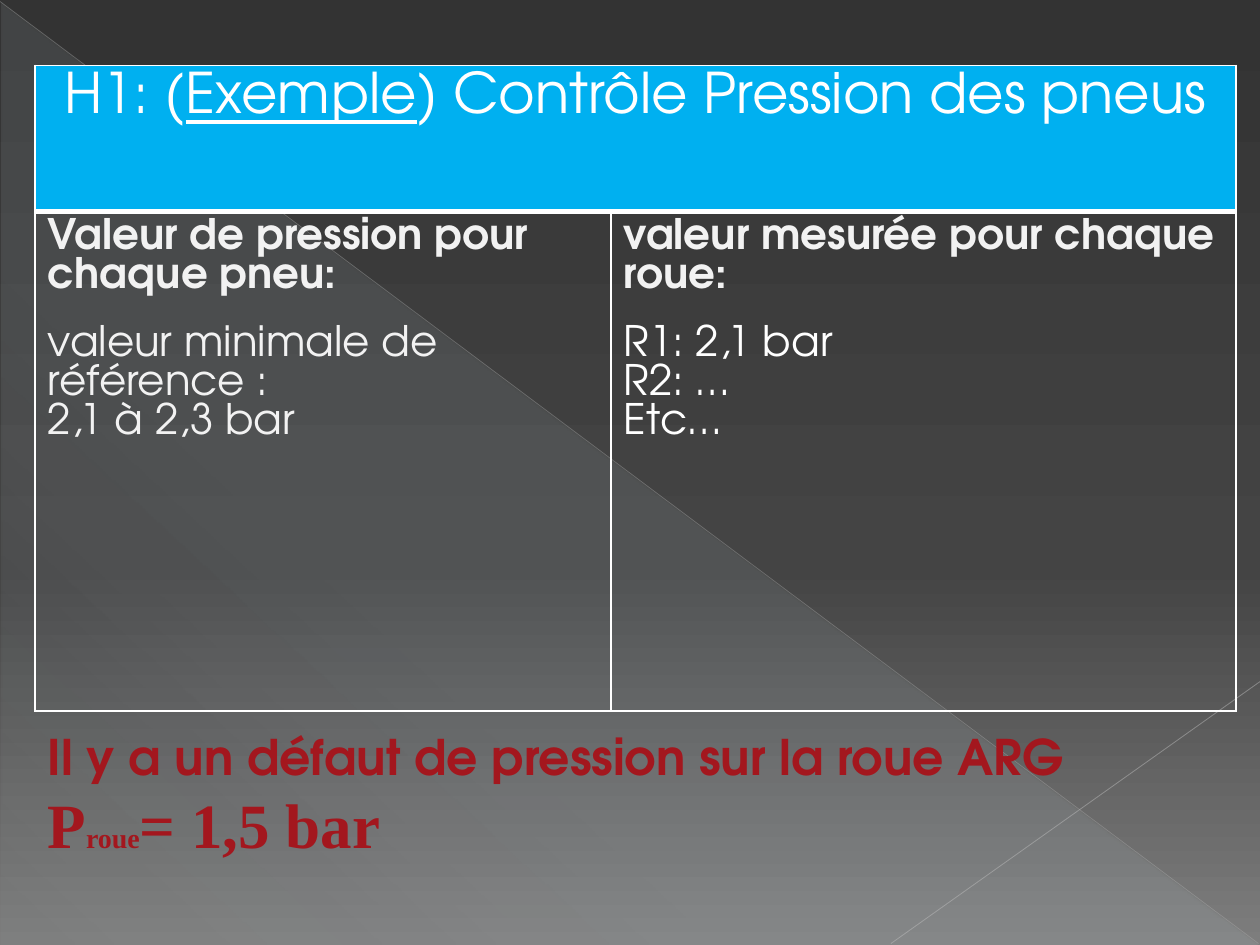
from lxml import etree
from pptx import Presentation
from pptx.dml.color import RGBColor
from pptx.enum.shapes import MSO_CONNECTOR, MSO_SHAPE
from pptx.enum.text import MSO_AUTO_SIZE, PP_ALIGN
from pptx.oxml.ns import qn
from pptx.util import Cm, Pt

STRAIGHT = MSO_CONNECTOR.STRAIGHT
TRIANGLE = MSO_SHAPE.RIGHT_TRIANGLE
GROW = MSO_AUTO_SIZE.SHAPE_TO_FIT_TEXT
CENTER = PP_ALIGN.CENTER
SANS = "TeX Gyre Adventor"
SERIF = "Times New Roman"
WHITE, LIGHT, RED, BLUE = "FFFFFF", "F2F2F2", "A3171E", "00B0F0"


def add_color(parent, color, opacity=100):
    element = etree.SubElement(parent, qn("a:srgbClr"), val=color)
    if opacity < 100:
        etree.SubElement(element, qn("a:alpha"), val=str(opacity * 1000))


def add_run(paragraph, text, color, **formats):
    run = paragraph.add_run()
    run.text = text
    run.font.color.rgb = RGBColor.from_string(color)
    for name, value in formats.items():
        setattr(run.font, name, value)
    return run


presentation = Presentation()
presentation.slide_width, presentation.slide_height = Cm(25.4), Cm(19.05)
slide = presentation.slides.add_slide(presentation.slide_layouts[6])

triangle = slide.shapes.add_shape(TRIANGLE, Cm(0.03), Cm(0.05), Cm(25.35), Cm(19))
triangle.shadow.inherit = False
triangle.line.fill.background()
background = slide.background

gradients = [
    (background.fill, slide.element.cSld.find(qn("p:bg")), 270,
     [(0, "333333", 100), (60, "444444", 100), (100, "7D7D7D", 100)]),
    (triangle.fill, triangle.element, 227,
     [(0, "DEF5FA", 10), (70, "DEF5FA", 8), (100, "DEF5FA", 1)]),
]
for fill, owner, angle, stops in gradients:
    fill.gradient()
    fill.gradient_angle = angle
    owner = slide.element.cSld.find(qn("p:bg")) if owner is None else owner
    stop_list = next(owner.iter(qn("a:gsLst")))
    for stop in list(stop_list):
        stop_list.remove(stop)
    for position, color, opacity in stops:
        stop = etree.SubElement(stop_list, qn("a:gs"), pos=str(position * 1000))
        add_color(stop, color, opacity)

diagonals = [
    (0, 0.03, 25.37, 19.02, "B9B9B9", 0.39, 35),
    (25.4, 13.74, 17.96, 19.02, "C1C1C1", 0.47, 45),
]
for left, top, right, bottom, color, width, opacity in diagonals:
    line = slide.shapes.add_connector(STRAIGHT, Cm(left), Cm(top), Cm(right), Cm(bottom))
    line.line.width = Pt(width)
    line.line.color.rgb = RGBColor.from_string(color)
    line_color = next(line.element.spPr.iter(qn("a:srgbClr")))
    etree.SubElement(line_color, qn("a:alpha"), val=str(opacity * 1000))
    etree.SubElement(line.element.spPr, qn("a:effectLst"))

table = slide.shapes.add_table(2, 2, Cm(0.71), Cm(1.32), Cm(24.21), Cm(13.01)).table
table.first_row = table.horz_banding = False
for column, width in zip(table.columns, (11.61, 12.6)):
    column.width = Cm(width)
for row, height in zip(table.rows, (2.95, 10.06)):
    row.height = Cm(height)

for row_index, row in enumerate(table.rows):
    for cell in row.cells:
        if row_index == 0:
            cell.fill.solid()
            cell.fill.fore_color.rgb = RGBColor.from_string(BLUE)
        else:
            cell.fill.background()
        properties = cell._tc.get_or_add_tcPr()
        for position, side in enumerate(("lnL", "lnR", "lnT", "lnB")):
            points = 3 if row_index == 0 and side == "lnB" else 1
            border = etree.Element(qn(f"a:{side}"), w=str(Pt(points)))
            add_color(etree.SubElement(border, qn("a:solidFill")), WHITE)
            properties.insert(position, border)

header = table.cell(0, 0)
header.merge(table.cell(0, 1))
paragraph = header.text_frame.paragraphs[0]
paragraph.alignment = CENTER
for text, underline in [
    ("H1: (", False), ("Exemple", True), (") Contrôle Pression des pneus", False),
]:
    add_run(paragraph, text, WHITE, name=SANS, size=Pt(32), underline=underline)

columns = [
    (LIGHT, ["Valeur de pression pour chaque pneu:",
             "valeur minimale de référence :", "2,1 à 2,3 bar"]),
    (WHITE, ["valeur mesurée pour chaque roue:", "R1: 2,1 bar", "R2: …", "Etc…"]),
]
for column_index, (color, lines) in enumerate(columns):
    text_frame = table.cell(1, column_index).text_frame
    for index, text in enumerate(lines):
        paragraph = text_frame.add_paragraph() if index else text_frame.paragraphs[0]
        if index == 1:
            paragraph.space_before = Pt(17)
        add_run(paragraph, text, color if index else LIGHT,
                name=SANS, size=Pt(24), bold=index == 0)

conclusion = slide.shapes.add_textbox(Cm(0.71), Cm(14.53), Cm(24.21), Cm(3))
conclusion.text_frame.word_wrap = True
conclusion.text_frame.auto_size = GROW
paragraph = conclusion.text_frame.paragraphs[0]
for text, font, size in [
    ("Il y a un défaut de pression sur la roue ARG", SANS, 28),
    ("P", SERIF, 36), ("roue", SERIF, 16), ("= 1,5 bar", SERIF, 36),
]:
    if text == "P":
        paragraph.add_line_break()
    run = add_run(paragraph, text, RED, name=font, size=Pt(size), bold=True)
    outline = etree.Element(qn("a:ln"), w=str(Pt(0.75)))
    add_color(etree.SubElement(outline, qn("a:solidFill")), WHITE)
    run.font._element.insert(0, outline) if hasattr(run.font, "_element") else run._r.rPr.insert(0, outline)

presentation.save("out.pptx")
